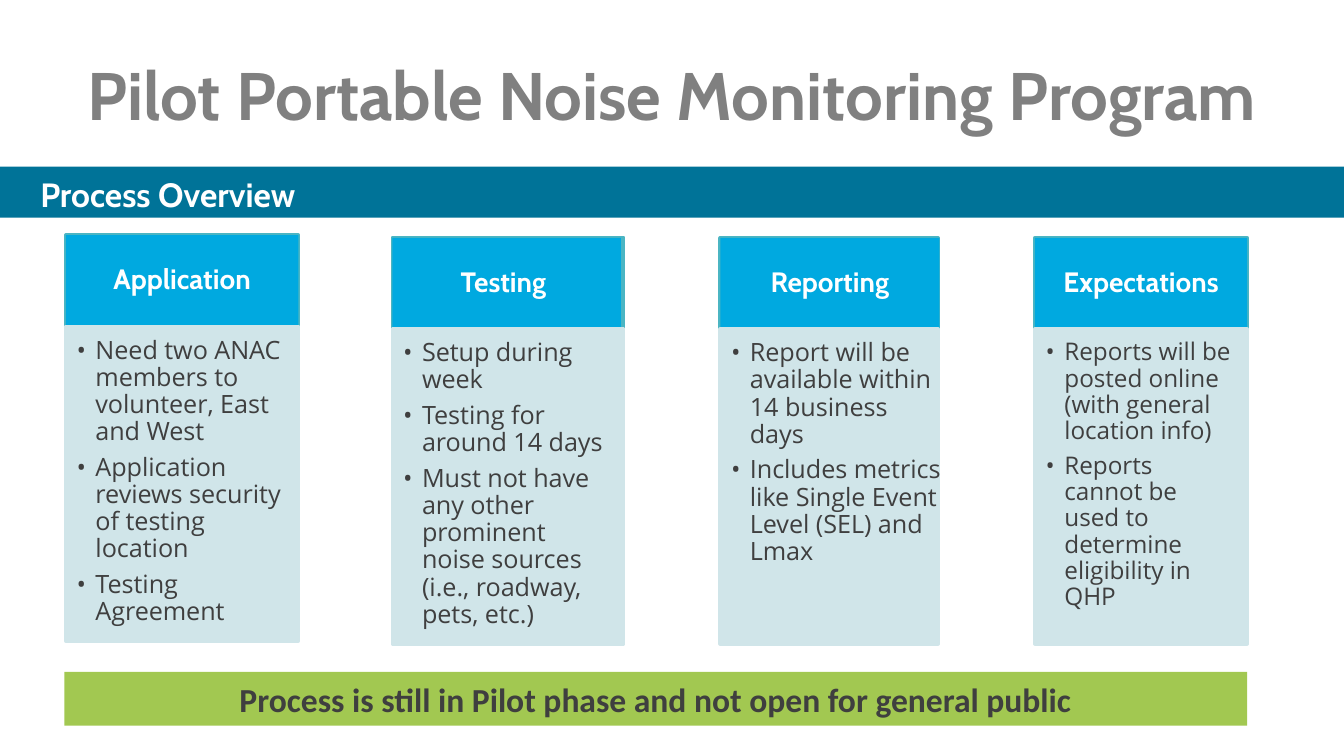
from lxml.etree import SubElement
from pptx import Presentation
from pptx.dml.color import RGBColor as RGB
from pptx.enum.shapes import MSO_SHAPE as Shape
from pptx.enum.text import MSO_ANCHOR as Anchor, PP_ALIGN as Align
from pptx.oxml.ns import qn
from pptx.util import Inches, Pt

WHITE = RGB(0xFF, 0xFF, 0xFF)
GRAY = RGB(0x80, 0x80, 0x80)
DARK = RGB(0x3F, 0x3F, 0x3F)
NAVY = RGB(0x00, 0x73, 0x98)
TEAL = RGB(0x4B, 0xB5, 0xC3)
BLUE = RGB(0x00, 0xA9, 0xE0)
PALE = RGB(0xD0, 0xE5, 0xE9)
GREEN = RGB(0xA2, 0xC8, 0x51)

# Content
TITLE = "Pilot Portable Noise Monitoring Program"
BANNER = "Process Overview"
NOTE = "Process is still in Pilot phase and not open for general public"
# Each stage: name, left, top, panel width, header width, list width, size, items
STAGES = [
    ("Application", 0.49, 1.75, 1.73, 1.73, 1.72, 13.5, [
        "Need two ANAC members to volunteer, East and West",
        "Application reviews security of testing location",
        "Testing Agreement"]),
    ("Testing ", 2.92, 1.77, 1.72, 1.7, 1.72, 13.5, [
        "Setup during week",
        "Testing for around 14 days",
        "Must not have any other prominent noise sources "
        "(i.e., roadway, pets, etc.)"]),
    ("Reporting", 5.36, 1.77, 1.62, 1.63, 1.74, 13.5, [
        "Report will be available within 14 business days",
        "Includes metrics like Single Event Level (SEL) and Lmax"]),
    ("Expectations", 7.7, 1.77, 1.58, 1.58, 1.58, 13, [
        "Reports will be posted online (with general location info)",
        "Reports cannot be used to determine eligibility in QHP"]),
]
HEAD, BODY = 0.68, 2.34  # row heights
INDENT = Inches(0.14)


def write(shape, lines, size, color, font="Cabin", bold=True,
          align=Align.CENTER, anchor=Anchor.MIDDLE,
          inset=(0.1, 0.05, 0.1, 0.05), space=None, after=0, bullet=False):
    frame = shape.text_frame
    frame.word_wrap = True
    frame.vertical_anchor = anchor
    (frame.margin_left, frame.margin_top,
     frame.margin_right, frame.margin_bottom) = map(Inches, inset)
    for i, line in enumerate(lines):
        para = frame.add_paragraph() if i else frame.paragraphs[0]
        para.alignment = align
        para.line_spacing = space
        para.space_after = Pt(after)
        if bullet:
            props = para._p.get_or_add_pPr()
            props.set("marL", str(INDENT))
            props.set("indent", str(-INDENT))
            SubElement(props, qn("a:buFont")).set("typeface", "Open Sans")
            SubElement(props, qn("a:buChar")).set("char", "•")
        run = para.add_run()
        run.text = line
        run.font.name, run.font.size, run.font.bold = font, Pt(size), bold
        run.font.color.rgb = color


def block(shapes, box, fill, edge=None):
    shape = shapes.add_shape(Shape.RECTANGLE, *map(Inches, box))
    shape.shadow.inherit = False
    shape.fill.solid()
    shape.fill.fore_color.rgb = fill
    if edge:
        shape.line.color.rgb = edge
        shape.line.width = Pt(2)
    else:
        shape.line.fill.background()
    return shape


deck = Presentation()
deck.slide_width = Inches(10)
deck.slide_height = deck.slide_width * 9 // 16
slide = deck.slides.add_slide(deck.slide_layouts[5])

# Title and banner
title = slide.shapes.title
title.left, title.top, title.width, title.height = map(
    Inches, (0, 0.23, 10, 0.94))
write(title, [TITLE], 36, GRAY)
banner = block(slide.shapes, (0, 1.24, 10, 0.38), NAVY)
write(banner, [BANNER], 18, WHITE, align=Align.LEFT, anchor=Anchor.TOP,
      inset=(0.3, 0.04, 0.07, 0.04), space=Pt(22.5))

# Stage columns: header above a list panel
for name, left, top, wide, cap, span, size, items in STAGES:
    group = slide.shapes.add_group_shape().shapes
    low = top + HEAD
    block(group, (left, top, wide, HEAD), TEAL, TEAL)
    head = block(group, (left, top, cap, HEAD), BLUE)
    write(head, [name], 15, WHITE, inset=(0.12, 0.07, 0.12, 0.07), space=0.9)
    block(group, (left, low, wide, BODY), PALE, PALE)
    text = group.add_textbox(*map(Inches, (left, low, span, BODY)))
    write(text, items, size, DARK, "Open Sans", False, Align.LEFT, Anchor.TOP,
          (0.08, 0.08, 0.1, 0.12), space=0.9, after=4.5, bullet=True)

# Closing note
note = block(slide.shapes, (0.48, 5, 8.8, 0.4), GREEN)
write(note, [NOTE], 18, DARK, "Calibri")

deck.save("out.pptx")
